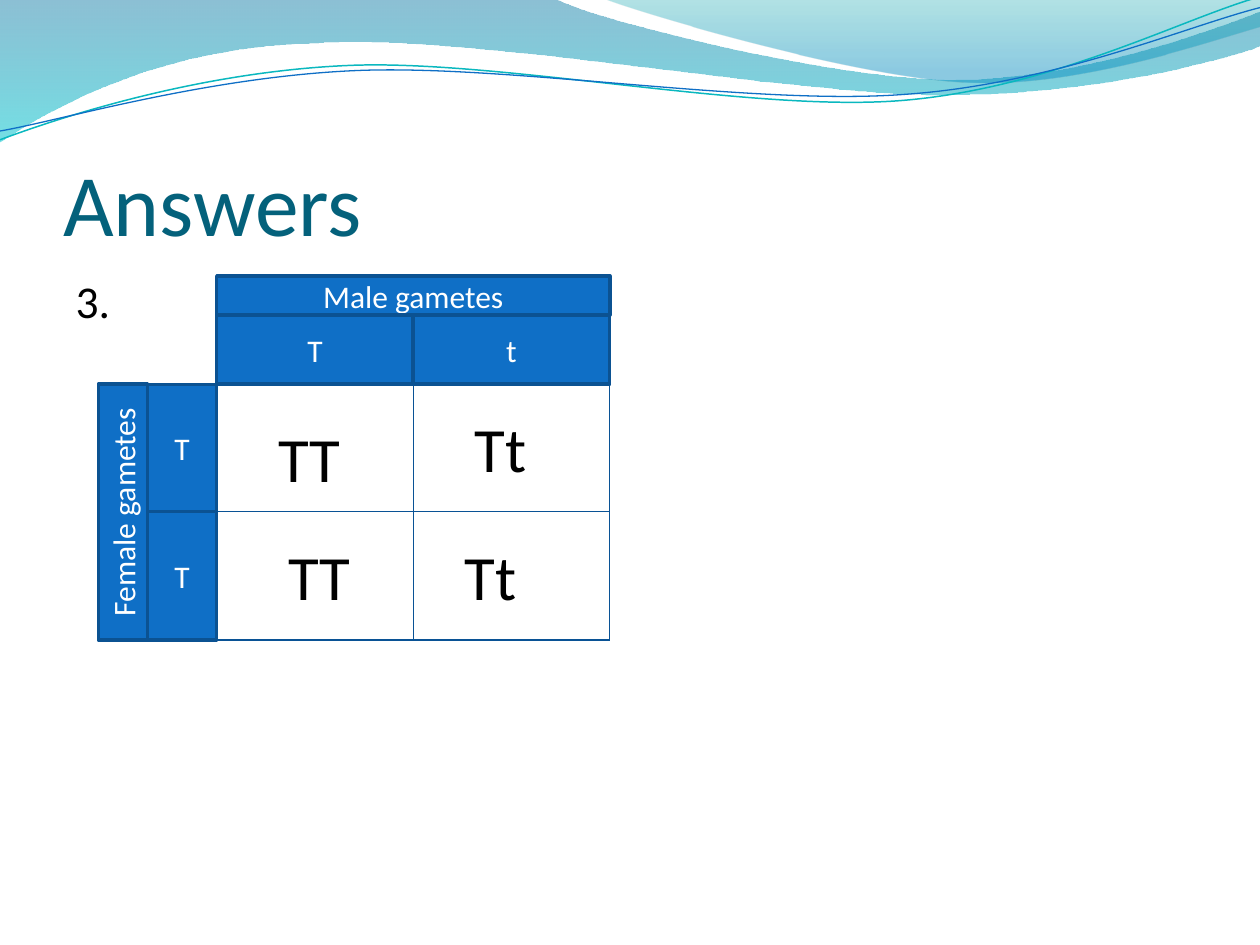
"""Build the Answers slide with a Punnett square under a wave banner."""
from math import cos, radians, sin
from lxml import etree
from pptx import Presentation
from pptx.dml.color import RGBColor
from pptx.enum.shapes import MSO_CONNECTOR, MSO_SHAPE
from pptx.enum.text import MSO_ANCHOR, MSO_AUTO_SIZE, PP_ALIGN
from pptx.oxml.ns import qn
from pptx.util import Inches, Pt

RECT, LINE = MSO_SHAPE.RECTANGLE, MSO_CONNECTOR.STRAIGHT
TOP, MID, LOW = MSO_ANCHOR.TOP, MSO_ANCHOR.MIDDLE, MSO_ANCHOR.BOTTOM
LEFT, MIDDLE = PP_ALIGN.LEFT, PP_ALIGN.CENTER
NOFIT = MSO_AUTO_SIZE.NONE
BLUE, EDGE = RGBColor(0x0F, 0x6F, 0xC6), RGBColor(0x0B, 0x52, 0x92)
RULE, AQUA = RGBColor(0x09, 0x52, 0x95), RGBColor(0x0A, 0xB8, 0xBF)
WHITE, BLACK = RGBColor(255, 255, 255), RGBColor(0, 0, 0)
TEAL = RGBColor(0x04, 0x61, 0x7B)
DEEP, CYAN = RGBColor(0x00, 0x74, 0xA1), RGBColor(0x00, 0xC6, 0xCF)
SEA, SKY = RGBColor(0x00, 0xA1, 0xA9), RGBColor(0x00, 0x8B, 0xBF)
FONT = "Calibri"
TILT = -2.7

BANDS = [
    ((-0.01, -0.01, 10.02, 1.14),
     [(0, 0), (4.4, -0.01), (4.76, 0.17, 6.64, 0.63, 7.58, 0.63),
      (8.53, 0.63, 9.58, 0.26, 10, 0.09), (10.01, 0.36),
      (9.83, 0.44, 8.7, 0.76, 7.46, 0.75), (6.22, 0.75, 3.82, 0.28, 2.57, 0.34),
      (1.29, 0.36, 0.46, 0.83, -0.01, 1.13), (0, 0)],
     [(0, DEEP, 45), (1, CYAN, 55)]),
    ((4.79, -0.01, 5.21, 0.7),
     [(4.79, -0.01), (5.09, 0.11, 6.82, 0.62, 7.69, 0.65),
      (8.56, 0.69, 9.61, 0.32, 10, 0.21), (10, 0), (4.79, -0.01)],
     [(0, SEA, 30), (0.8, SKY, 45)]),
]
WAVES = [
    ((-0.02, 0.22, 10.02, 0.71),
     [(0, 1.11), (0.48, 0.93, 1.58, 0.57, 2.77, 0.52),
      (3.95, 0.47, 5.93, 0.89, 7.13, 0.8), (8.33, 0.71, 9.38, 0.15, 9.98, -0.02)],
     AQUA, 0.85),
    ((-0.02, 0.3, 10.03, 0.58),
     [(0, 1.04), (0.47, 0.96, 1.64, 0.61, 2.83, 0.56),
      (4.03, 0.51, 5.97, 0.84, 7.17, 0.75), (8.36, 0.67, 9.41, 0.21, 10, 0.06)],
     BLUE, 0.75),
]
MALE, FEMALE = ["T", "t"], ["T", "T"]
CROSS = [("TT", 2.11, 3.28), ("Tt", 3.67, 3.2), ("TT", 2.19, 4.22), ("Tt", 3.59, 4.22)]
COLS, ROWS = [1.72, 3.28, 4.84], [3.05, 4.06, 5.08]
HEAD, SUB, SIDE, INNER = 2.19, 2.5, 0.78, 1.17


def place(shape, *box):
    """Move a shape to left, top, width, height."""
    shape.left, shape.top, shape.width, shape.height = map(Inches, box)


def draw(slide, box, points, close=True, tilt=0):
    """Draw an outline of straight and Bezier segments in a tilted box."""
    left, top, width, height = box
    turn = radians(-tilt)

    def local(x, y):
        """Give a slide point inside the untilted box."""
        dx, dy = x - left - width / 2, y - top - height / 2
        return (Inches(dx * cos(turn) - dy * sin(turn) + width / 2),
                Inches(dx * sin(turn) + dy * cos(turn) + height / 2))

    ends = [local(*seg[-2:]) for seg in points]
    pen = slide.shapes.build_freeform(*ends[0])
    pen.add_line_segments(ends[1:], close=close)
    shape = pen.convert_to_shape()
    shape.shadow.inherit = False
    place(shape, *box)
    shape.rotation = tilt
    track = next(shape.element.iter(qn("a:path")))
    track.set("w", str(shape.width))
    track.set("h", str(shape.height))
    for step, seg in zip(track, points):
        if len(seg) == 6:
            step.tag = qn("a:cubicBezTo")
        for old in list(step):
            step.remove(old)
        for x, y in zip(seg[::2], seg[1::2]):
            spot = etree.SubElement(step, qn("a:pt"))
            for key, value in zip("xy", local(x, y)):
                spot.set(key, str(value))
    return shape


def band(slide, box, points, stops):
    """Draw a closed band with a see-through gradient."""
    shape = draw(slide, box, points)
    shape.line.fill.background()
    shape.fill.gradient()
    shape.fill.gradient_angle = 270
    for stop, (pos, color, _) in zip(shape.fill.gradient_stops, stops):
        stop.position, stop.color.rgb = pos, color
    tints = shape.element.spPr.iter(qn("a:srgbClr"))
    for tint, (_, _, alpha) in zip(tints, stops):
        etree.SubElement(tint, qn("a:alpha")).set("val", str(alpha * 1000))


def wave(slide, box, points, color, width):
    """Draw an open curve."""
    shape = draw(slide, box, points, False, TILT)
    shape.fill.background()
    shape.line.color.rgb, shape.line.width = color, Pt(width)


def write(shape, text, size, color, align=LEFT, anchor=TOP):
    """Write one run and return its paragraph."""
    frame = shape.text_frame
    frame.word_wrap, frame.auto_size = True, NOFIT
    frame.vertical_anchor = anchor
    para = frame.paragraphs[0]
    para.alignment = align
    run = para.add_run()
    run.text = text
    font = run.font
    font.name, font.size, font.color.rgb = FONT, Pt(size), color
    return para


def cell(slide, text, left, top, right, base, turn=False):
    """Add a blue heading cell."""
    box = map(Inches, (left, top, right - left, base - top))
    shape = slide.shapes.add_shape(RECT, *box)
    shape.shadow.inherit = False
    shape.fill.solid()
    shape.fill.fore_color.rgb = BLUE
    shape.line.color.rgb, shape.line.width = EDGE, Pt(2)
    write(shape, text, 18, WHITE, MIDDLE, MID)
    if turn:
        shape.text_frame._txBody.bodyPr.set("vert", "vert270")


def rule(slide, *ends):
    """Add a thin grid line."""
    line = slide.shapes.add_connector(LINE, *map(Inches, ends))
    line.line.color.rgb, line.line.width = RULE, Pt(0.75)
    etree.SubElement(line.element.spPr, qn("a:effectLst"))


def main():
    """Build and save the slide."""
    deck = Presentation()
    deck.slide_width, deck.slide_height = Inches(10), Inches(7.5)
    slide = deck.slides.add_slide(deck.slide_layouts[1])
    title, body = slide.placeholders
    for item in BANDS:
        band(slide, *item)
    for item in WAVES:
        wave(slide, *item)
    for holder in (title, body):
        holder.element.getparent().append(holder.element)

    place(title, 0.5, 0.77, 9, 1.25)
    write(title, "Answers", 50, TEAL, anchor=LOW)
    frame = title.text_frame
    frame.margin_left = frame.margin_right = frame.margin_bottom = 0
    place(body, 0.5, 2.12, 9, 4.8)
    para = write(body, "3.", 26, BLACK)
    para.space_before = Pt(5.2)
    props = para._p.get_or_add_pPr()
    props.set("marL", str(Inches(0.3)))
    props.set("indent", str(Inches(-0.3)))
    etree.SubElement(props, qn("a:buNone"))

    cell(slide, "Male gametes", COLS[0], HEAD, COLS[-1], SUB)
    for text, left, right in zip(MALE, COLS, COLS[1:]):
        cell(slide, text, left, SUB, right, ROWS[0])
    for text, top, base in zip(FEMALE, ROWS, ROWS[1:]):
        cell(slide, text, INNER, top, COLS[0], base)
    cell(slide, "Female gametes", SIDE, ROWS[0], INNER, ROWS[-1], True)
    for x in COLS[1:]:
        rule(slide, x, ROWS[0], x, ROWS[-1])
    for y in ROWS[:0:-1]:
        rule(slide, COLS[0], y, COLS[-1], y)
    for text, left, top in CROSS:
        box = slide.shapes.add_textbox(*map(Inches, (left, top, 0.78, 0.71)))
        write(box, text, 36, BLACK)
    deck.save("out.pptx")


if __name__ == "__main__":
    main()
